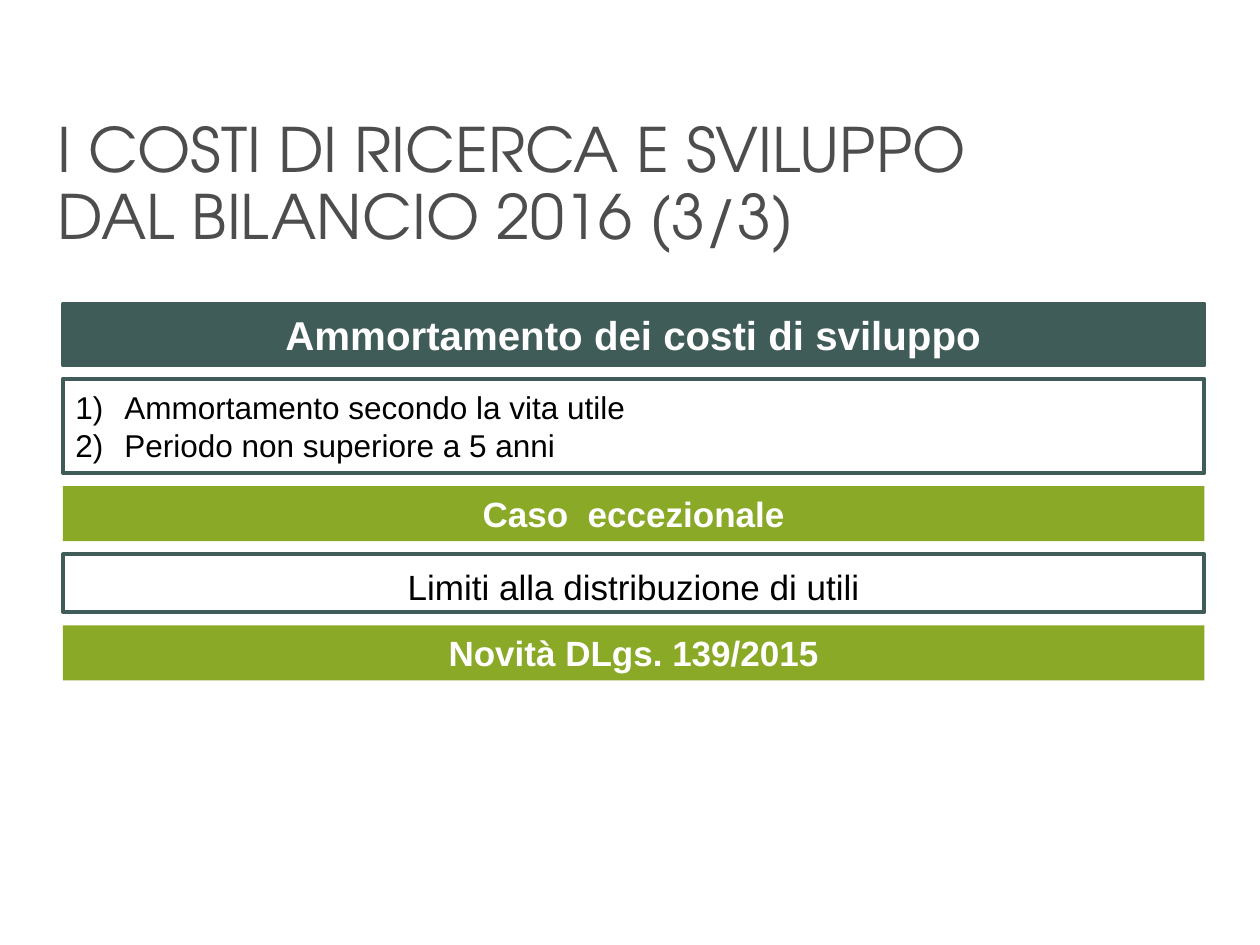
from lxml import etree
from pptx import Presentation
from pptx import util as u
from pptx.dml.color import RGBColor
from pptx.enum import shapes, text
from pptx.oxml import ns

TEAL = RGBColor(0x40, 0x5C, 0x58)
GREEN = RGBColor(0x89, 0xA9, 0x27)
WHITE = RGBColor(0xFF, 0xFF, 0xFF)
BLACK = RGBColor(0, 0, 0)
GRAY = RGBColor(0x4D, 0x4D, 0x4D)


class SlideBuilder:
    body_font = "Arial"
    title_font = "TeX Gyre Adventor"
    left, width, gap = 36, 652.3, 7.5

    def __init__(self, slide, top):
        self.slide = slide
        self.top = top

    def format_runs(self, paragraph, font_name, size, color, bold=False):
        for run in paragraph.runs:
            run.font.name = font_name
            run.font.size = u.Pt(size)
            run.font.bold = bold
            run.font.color.rgb = color

    def title(self, content):
        shape = self.slide.shapes.add_textbox(u.Pt(26), u.Pt(65), u.Pt(638), u.Pt(77.5))
        shape.text_frame.word_wrap = True
        shape.text_frame.text = content
        paragraph = shape.text_frame.paragraphs[0]
        paragraph.line_spacing = 0.9
        self.format_runs(paragraph, self.title_font, 35, GRAY)

    def bar(self, content, height, size, color, fill=None, line=None, spacing=None):
        shape = self.slide.shapes.add_shape(
            shapes.MSO_SHAPE.RECTANGLE,
            u.Pt(self.left), u.Pt(self.top), u.Pt(self.width), u.Pt(height))
        self.top += height + self.gap
        shape.shadow.inherit = False
        if fill is None:
            shape.fill.background()
        else:
            shape.fill.solid()
            shape.fill.fore_color.rgb = fill
        if line is None:
            shape.line.fill.background()
        else:
            shape.line.color.rgb = line
            shape.line.width = u.Pt(2.25)
        frame = shape.text_frame
        frame.word_wrap = True
        if fill is not None:
            frame.auto_size = text.MSO_AUTO_SIZE.SHAPE_TO_FIT_TEXT
        frame.vertical_anchor = text.MSO_ANCHOR.TOP if fill is not None else text.MSO_ANCHOR.MIDDLE
        frame.text = content
        for paragraph in frame.paragraphs:
            paragraph.alignment = text.PP_ALIGN.CENTER
            if spacing:
                paragraph.line_spacing = u.Pt(spacing)
            self.format_runs(paragraph, self.body_font, size, color, bold=fill is not None)
        return shape

    def numbered_bar(self, items, height, size, color, line):
        shape = self.bar("\n".join(items), height, size, color, line=line)
        for paragraph in shape.text_frame.paragraphs:
            paragraph.alignment = text.PP_ALIGN.LEFT
            properties = paragraph._p.get_or_add_pPr()
            properties.set("marL", str(u.Pt(28)))
            properties.set("indent", str(u.Pt(-28)))
            bullet_font = etree.SubElement(properties, ns.qn("a:buFont"))
            bullet_font.set("typeface", self.body_font)
            numbering = etree.SubElement(properties, ns.qn("a:buAutoNum"))
            numbering.set("type", "arabicParenR")


def main():
    presentation = Presentation()
    presentation.slide_width = u.Pt(720)
    presentation.slide_height = u.Pt(540)
    slide = presentation.slides.add_slide(presentation.slide_layouts[6])
    builder = SlideBuilder(slide, top=173.5)
    builder.title("I COSTI DI RICERCA E SVILUPPO\vDAL BILANCIO 2016 (3/3)")
    builder.bar("Ammortamento dei costi di sviluppo", 35.3, 23, WHITE,
                fill=TEAL, line=TEAL, spacing=28)
    builder.numbered_bar(["Ammortamento secondo la vita utile",
                          "Periodo non superiore a 5 anni"], 54, 18, BLACK, TEAL)
    builder.bar("Caso  eccezionale", 31.5, 20, WHITE, fill=GREEN)
    builder.bar("Limiti alla distribuzione di utili", 33, 20, BLACK, line=TEAL, spacing=28)
    builder.bar("Novità DLgs. 139/2015", 31.5, 20, WHITE, fill=GREEN)
    presentation.save("out.pptx")


if __name__ == "__main__":
    main()
